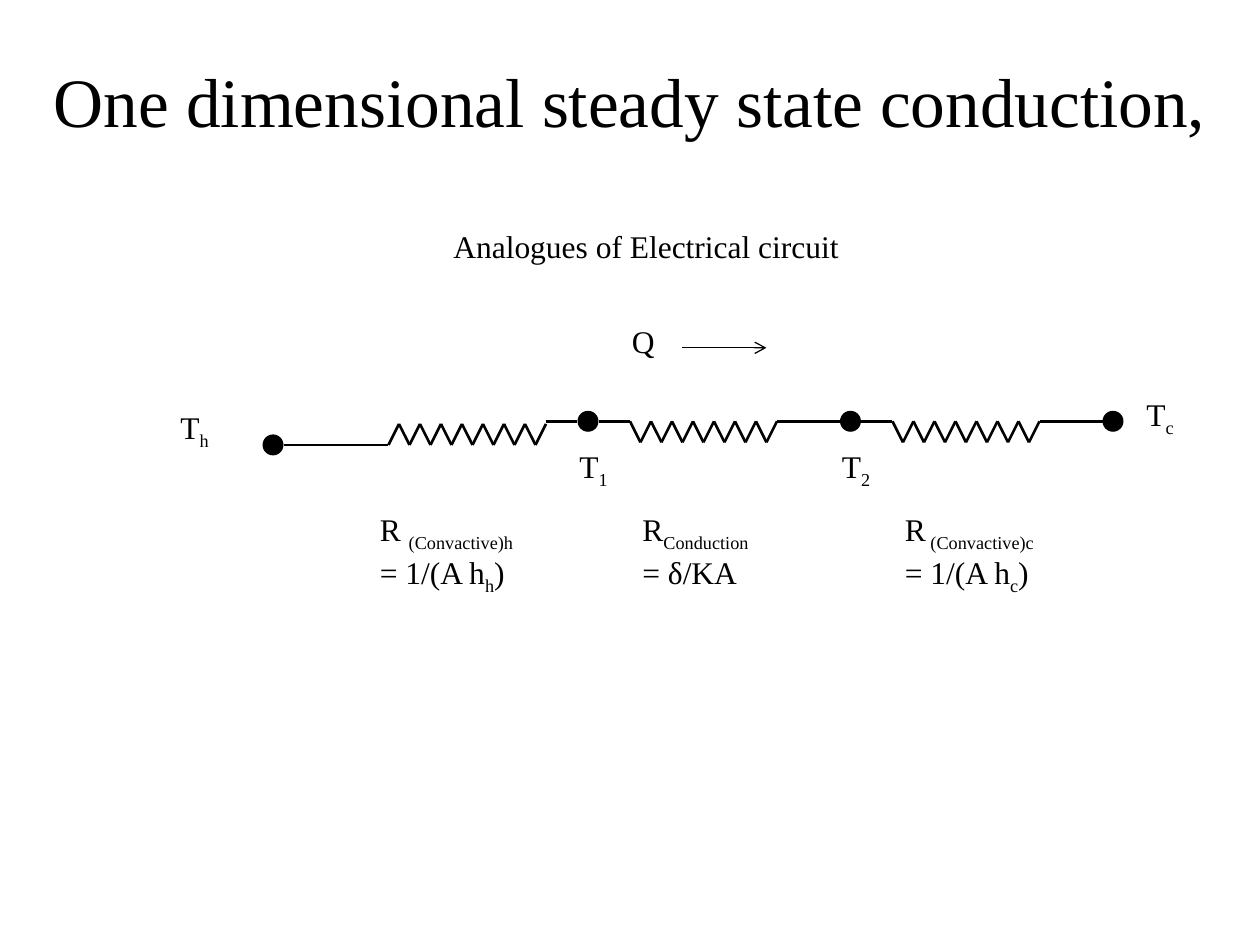
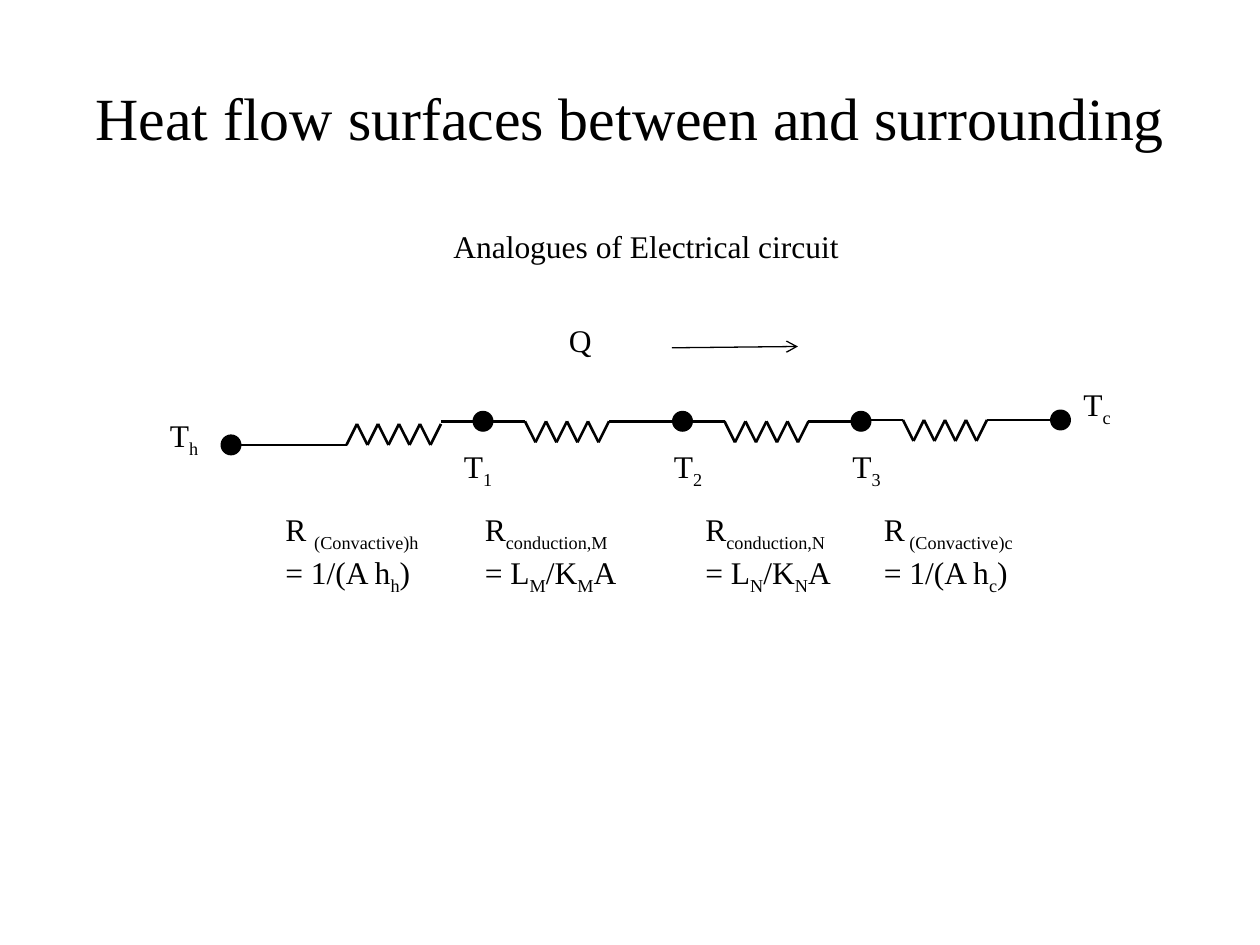
from collections import namedtuple

from lxml import etree
from pptx import Presentation
from pptx import util as u
from pptx.dml.color import RGBColor
from pptx.enum import shapes, text
from pptx.oxml.ns import qn

PX = 9525  # 96 px to the inch
FONT = "Times New Roman"
INK = "000000"
PAPER = "FFFFFF"
TITLE_ONLY = 5

NODE = 16
TOOTH_WIDTH, TOOTH_HEIGHT = 8, 16
HOT_Y, WIRE_Y = 339, 321
NODE_LABEL_Y, RESISTANCE_Y = 336, 384

# A resistor with its two wires and the node that follows (left edge of its dot).
Stage = namedtuple("Stage", "start end wire_end node y", defaults=[WIRE_Y])


def px(length):
    return u.Emu(length * PX)


def color(hex_value):
    return RGBColor.from_string(hex_value)


def write(frame, content, size=18, align=text.PP_ALIGN.LEFT, ink=INK):
    """Fill a text frame; parts between bars are subscripts."""
    for index, line in enumerate(content.split("\n")):
        paragraph = frame.add_paragraph() if index else frame.paragraphs[0]
        paragraph.alignment = align
        for part_index, part in enumerate(line.split("|")):
            if not part:
                continue
            run = paragraph.add_run()
            run.text = part
            run.font.name = FONT
            run.font.size = u.Pt(size)
            run.font.color.rgb = color(ink)
            if part_index % 2:
                run._r.get_or_add_rPr().set("baseline", "-25000")


def add_titled_slide(deck, title, box, size):
    slide = deck.slides.add_slide(deck.slide_layouts[TITLE_ONLY])
    slide.background.fill.solid()
    slide.background.fill.fore_color.rgb = color(PAPER)
    heading = slide.shapes.title
    heading.left, heading.top, heading.width, heading.height = map(px, box)
    frame = heading.text_frame
    frame.auto_size = text.MSO_AUTO_SIZE.NONE
    frame.vertical_anchor = text.MSO_ANCHOR.MIDDLE
    write(frame, title, size=size, align=text.PP_ALIGN.CENTER)
    return slide


def add_label(slide, content, left, top, width=72, height=38):
    frame = slide.shapes.add_textbox(*map(px, (left, top, width, height))).text_frame
    frame.word_wrap = True
    frame.auto_size = text.MSO_AUTO_SIZE.SHAPE_TO_FIT_TEXT
    write(frame, content)


def add_line(slide, start, end, weight=1.5, arrow=False):
    line = slide.shapes.add_connector(
        shapes.MSO_CONNECTOR.STRAIGHT, *map(px, (*start, *end)))
    line.line.color.rgb = color(INK)
    line.line.width = u.Pt(weight)
    if arrow:
        outline = line.line._get_or_add_ln()
        etree.SubElement(outline, qn("a:tailEnd"), type="arrow")
    etree.SubElement(line._element.spPr, qn("a:effectLst"))


def add_node(slide, left, center_y):
    dot = slide.shapes.add_shape(
        shapes.MSO_SHAPE.OVAL, *map(px, (left, center_y - NODE // 2, NODE, NODE)))
    dot.shadow.inherit = False
    dot.fill.solid()
    dot.fill.fore_color.rgb = color(INK)
    dot.line.fill.background()


def add_resistor(slide, start, end, first_y, second_y):
    """Draw a zigzag that alternates between two heights."""
    heights = (first_y, second_y)
    for index, x in enumerate(range(start, end, TOOTH_WIDTH)):
        add_line(slide, (x, heights[index % 2]),
                 (x + TOOTH_WIDTH, heights[1 - index % 2]))


def add_circuit(slide, hot_node, stages):
    """Chain the stages; the first one rises from the lower hot-side wire."""
    add_node(slide, hot_node, HOT_Y)
    previous_node = hot_node
    for index, stage in enumerate(stages):
        lead_y = stage.y if index else HOT_Y
        opposite_y = lead_y + (TOOTH_HEIGHT if index else -TOOTH_HEIGHT)
        add_line(slide, (previous_node + NODE, lead_y), (stage.start, lead_y))
        add_resistor(slide, stage.start, stage.end, lead_y, opposite_y)
        add_line(slide, (stage.end, stage.y), (stage.wire_end, stage.y))
        add_node(slide, stage.node, stage.y)
        previous_node = stage.node


def add_analogue(slide, hot_node, stages, ends, heat_flow, node_lefts, resistances):
    """Draw the circuit with its labels and the heat-flow arrow."""
    add_label(slide, "Analogues of Electrical circuit", 336, 168, width=336)
    add_circuit(slide, hot_node, stages)
    for name, position in zip("hc", ends):
        add_label(slide, f"T|{name}|", *position)
    label_at, arrow_start, arrow_end = heat_flow
    add_label(slide, "Q", *label_at)
    add_line(slide, arrow_start, arrow_end, weight=0.75, arrow=True)
    for number, left in enumerate(node_lefts, start=1):
        add_label(slide, f"T|{number}|", left, NODE_LABEL_Y)
    for left, formula in resistances:
        add_label(slide, formula, left, RESISTANCE_Y, width=136, height=68)


def main():
    deck = Presentation()
    deck.slide_width, deck.slide_height = px(960), px(720)

    hot_convection = "R |(Convactive)h|\n= 1/(A h|h|)"
    cold_convection = "R| (Convactive)c|\n= 1/(A h|c|)"

    single_wall = add_titled_slide(
        deck, "One dimensional steady state conduction,", (0, 16, 960, 120), 39.6)
    add_analogue(
        single_wall,
        hot_node=200,
        stages=[Stage(296, 416, 440, 440),
                Stage(480, 592, 648, 640),
                Stage(680, 792, 848, 840)],
        ends=[(128, 306), (864, 296)],
        heat_flow=[(472, 241), (520, 265), (584, 265)],
        node_lefts=[432, 632],
        resistances=[(280, hot_convection),
                     (480, "R|Conduction|\n= δ/KA"),
                     (680, cold_convection)])

    double_wall = add_titled_slide(
        deck, "Heat flow surfaces between and surrounding", (48, 29, 864, 120), 34.2)
    add_analogue(
        double_wall,
        hot_node=168,
        stages=[Stage(264, 336, 360, 360),
                Stage(400, 464, 520, 512),
                Stage(552, 616, 648, 648),
                Stage(688, 752, 808, 800, y=320)],
        ends=[(120, 312), (816, 289)],
        heat_flow=[(424, 240), (512, 265), (608, 264)],
        node_lefts=[344, 504, 640],
        resistances=[(208, hot_convection),
                     (360, "R|conduction,M|\n= L|M|/K|M|A"),
                     (528, "R|conduction,N|\n= L|N|/K|N|A"),
                     (664, cold_convection)])

    deck.save("out.pptx")


if __name__ == "__main__":
    main()
